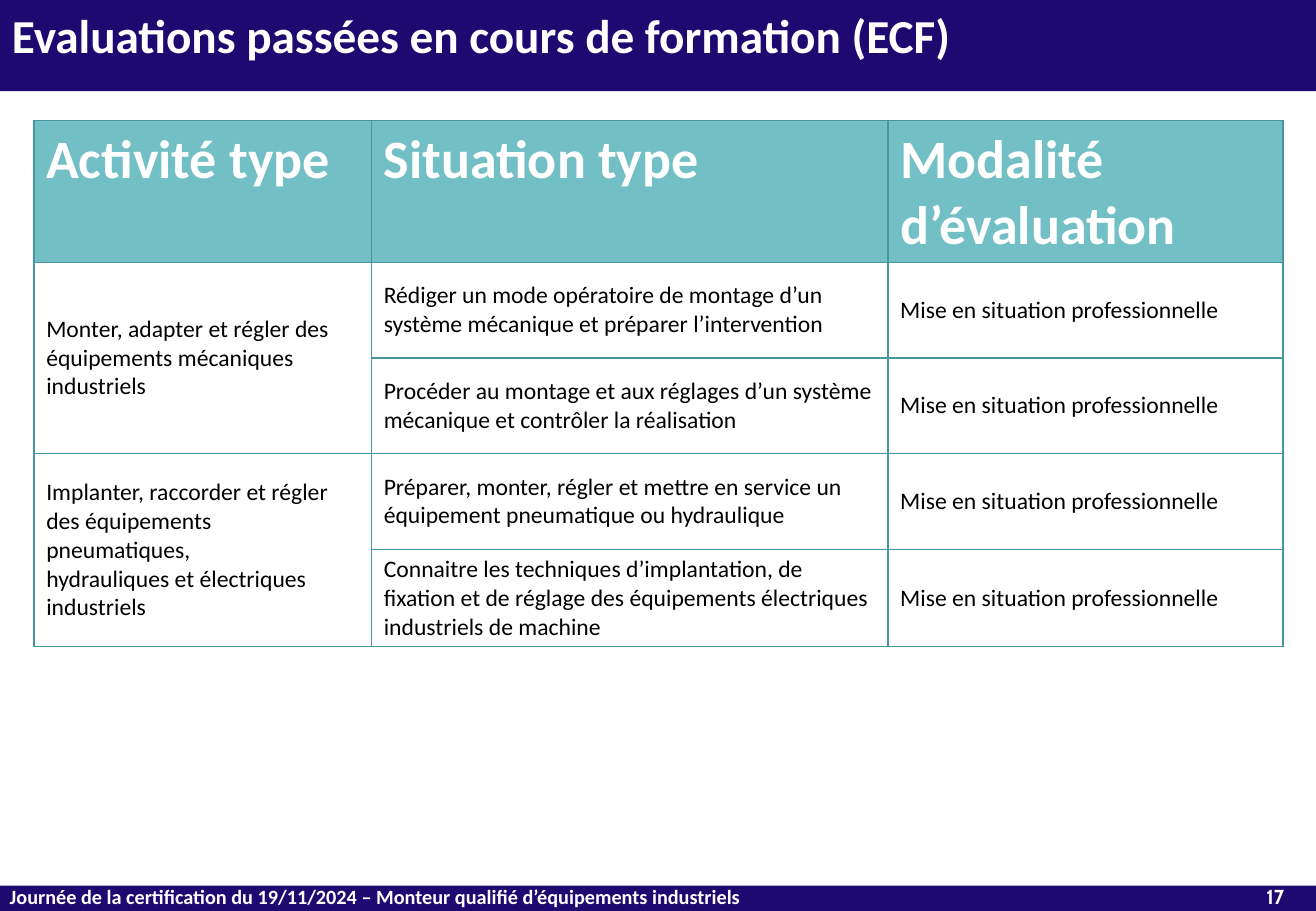
from dataclasses import dataclass

from lxml import etree
from pptx import Presentation
from pptx.dml.color import RGBColor
from pptx.enum.shapes import MSO_SHAPE
from pptx.enum.text import MSO_ANCHOR, PP_ALIGN
from pptx.oxml.ns import qn
from pptx.util import Pt

RECT = MSO_SHAPE.RECTANGLE
TOP, MIDDLE = MSO_ANCHOR.TOP, MSO_ANCHOR.MIDDLE
LEFT, CENTER = PP_ALIGN.LEFT, PP_ALIGN.CENTER


@dataclass(frozen=True)
class Theme:
    navy: str = "1D0970"
    teal: str = "72BFC5"
    edge: str = "4597A0"
    white: str = "FFFFFF"
    black: str = "000000"
    font: str = "Calibri"
    page_font: str = "Cabin"
    title: int = 28
    head: int = 32
    body: int = 14
    foot: int = 12


class Painter:
    def __init__(self, slide, theme):
        self.slide = slide
        self.theme = theme

    def bar(self, top, height, width):
        shape = self.slide.shapes.add_shape(RECT, Pt(0), Pt(top), Pt(width), Pt(height))
        shape.shadow.inherit = False
        shape.fill.solid()
        shape.fill.fore_color.rgb = RGBColor.from_string(self.theme.navy)
        shape.line.fill.background()

    def put(self, frame, lines, size, color, bold=False, font=None, align=LEFT):
        frame.word_wrap = True
        for index, line in enumerate(lines):
            para = frame.paragraphs[0] if index == 0 else frame.add_paragraph()
            para.alignment = align
            run = para.add_run()
            run.text = line
            run.font.name = font or self.theme.font
            run.font.size = Pt(size)
            run.font.bold = bold
            run.font.color.rgb = RGBColor.from_string(color)

    def label(self, box, text, size, inset=7.2, **style):
        frame = self.slide.shapes.add_textbox(*map(Pt, box)).text_frame
        frame.margin_left = frame.margin_right = Pt(inset)
        frame.margin_top = frame.margin_bottom = Pt(3.6)
        frame.vertical_anchor = TOP
        self.put(frame, [text], size, self.theme.white, bold=True, **style)

    def border(self, cell):
        props = cell._tc.get_or_add_tcPr()
        for index, side in enumerate(("lnL", "lnR", "lnT", "lnB")):
            line = etree.Element(qn(f"a:{side}"), w=str(Pt(1)))
            fill = etree.SubElement(line, qn("a:solidFill"))
            etree.SubElement(fill, qn("a:srgbClr"), val=self.theme.edge)
            props.insert(index, line)

    def table(self, left, top, widths, heights, heads, groups):
        theme = self.theme
        frame = self.slide.shapes.add_table(
            len(heights), len(widths), Pt(left), Pt(top), Pt(sum(widths)), Pt(sum(heights))
        )
        grid = frame.table
        grid.first_row = grid.horz_banding = False
        for column, width in zip(grid.columns, widths):
            column.width = Pt(width)
        for row, height in zip(grid.rows, heights):
            row.height = Pt(height)
        for index in range(len(heights)):
            for cell in grid.rows[index].cells:
                cell.fill.solid()
                tint = theme.white if index else theme.teal
                cell.fill.fore_color.rgb = RGBColor.from_string(tint)
                cell.vertical_anchor = MIDDLE if index else TOP
                self.border(cell)
        for index, head in enumerate(heads):
            self.put(grid.cell(0, index).text_frame, [head], theme.head, theme.white, bold=True)
        row = 1
        for task, cases, mode in groups:
            first = grid.cell(row, 0)
            first.merge(grid.cell(row + len(cases) - 1, 0))
            self.put(first.text_frame, task, theme.body, theme.black)
            for case in cases:
                for index, text in enumerate((case, mode), 1):
                    self.put(grid.cell(row, index).text_frame, [text], theme.body, theme.black)
                row += 1


def main():
    deck = Presentation()
    width, height = 779.76, 540
    deck.slide_width, deck.slide_height = Pt(width), Pt(height)
    theme = Theme()
    paint = Painter(deck.slides.add_slide(deck.slide_layouts[6]), theme)

    paint.bar(0, 54, width)
    paint.bar(525, 15, width)
    paint.label((735.84, 520.6, 39.6, 19.4), "17", theme.foot, font=theme.page_font, align=CENTER)
    paint.label(
        (0, 520.6, 735.8, 19.4),
        "Journée de la certification du 19/11/2024 – Monteur qualifié d’équipements industriels",
        theme.foot,
        inset=5.76,
    )
    paint.label((0, 0, 663, 54.7), "Evaluations passées en cours de formation (ECF)", theme.title)

    mode = "Mise en situation professionnelle"
    groups = [
        (
            ["Monter, adapter et régler des équipements mécaniques", "industriels"],
            [
                "Rédiger un mode opératoire de montage d’un système mécanique et préparer l’intervention",
                "Procéder au montage et aux réglages d’un système mécanique et contrôler la réalisation",
            ],
            mode,
        ),
        (
            [
                "Implanter, raccorder et régler des équipements pneumatiques,",
                "hydrauliques et électriques industriels",
            ],
            [
                "Préparer, monter, régler et mettre en service un équipement pneumatique ou hydraulique",
                "Connaitre les techniques d’implantation, de fixation et de réglage "
                "des équipements électriques industriels de machine",
            ],
            mode,
        ),
    ]
    heads = ["Activité type", "Situation type", "Modalité d’évaluation"]
    paint.table(20.2, 71.5, [200, 306, 234], [84] + [56.7] * 4, heads, groups)
    deck.save("out.pptx")


if __name__ == "__main__":
    main()
